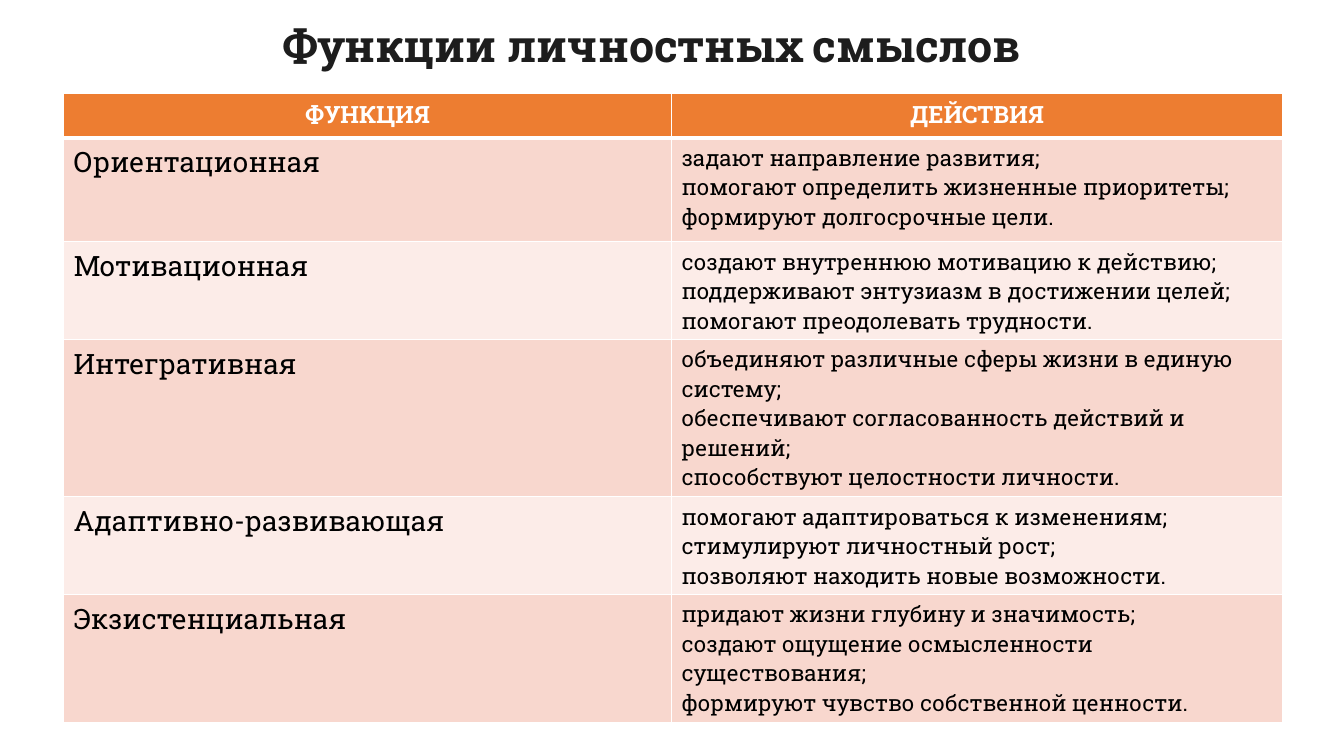
from lxml.etree import SubElement
from pptx import Presentation
from pptx.dml.color import RGBColor
from pptx.enum.text import MSO_AUTO_SIZE, PP_ALIGN
from pptx.oxml.ns import qn
from pptx.util import Inches, Pt

FONT = "Roboto Slab"
COLORS = {
    "title": "1D1D1D",
    "header": "ED7D31",
    "band_dark": "F8D7CE",
    "band_light": "FCECE8",
    "white": "FFFFFF",
    "black": "000000",
}
FORMATS = {
    "title": {"size": Pt(32), "bold": True, "color": "title"},
    "header": {"size": Pt(17), "bold": True, "color": "white"},
    "function": {"size": Pt(20), "bold": False, "color": "black"},
    "action": {"size": Pt(16), "bold": False, "color": "black"},
}
COLUMN_WIDTHS = [6.03, 6.06]
ROW_HEIGHTS = [0.44, 1.03, 0.97, 1.56, 0.97, 1.27]
HEADERS = ["ФУНКЦИЯ", "ДЕЙСТВИЯ"]
# "\n" starts a paragraph, "\v" breaks a line inside one
FUNCTIONS = [
    ("Ориентационная",
     "задают направление развития;\v"
     "помогают определить жизненные приоритеты;\v"
     "формируют долгосрочные цели."),
    ("Мотивационная",
     "создают внутреннюю мотивацию к действию;\n"
     "поддерживают энтузиазм в достижении целей;\n"
     "помогают преодолевать трудности."),
    ("Интегративная",
     "объединяют различные сферы жизни в единую систему;\n"
     "обеспечивают согласованность действий и решений;\n"
     "способствуют целостности личности."),
    ("Адаптивно-развивающая",
     "помогают адаптироваться к изменениям;\n"
     "стимулируют личностный рост;\n"
     "позволяют находить новые возможности."),
    ("Экзистенциальная",
     "придают жизни глубину и значимость;\n"
     "создают ощущение осмысленности существования;\n"
     "формируют чувство собственной ценности."),
]


def rgb(name):
    return RGBColor.from_string(COLORS[name])


def write_text(frame, text, style, align=PP_ALIGN.LEFT):
    frame.text = text
    for para in frame.paragraphs:
        para.alignment = align
        for span in para.runs:
            span.font.name = FONT
            for name, value in FORMATS[style].items():
                if name == "color":
                    span.font.color.rgb = rgb(value)
                else:
                    setattr(span.font, name, value)


def add_title(page, text):
    box = page.shapes.add_textbox(Inches(2.7), Inches(0.13), Inches(7.93), Inches(0.64))
    box.text_frame.word_wrap = True
    box.text_frame.auto_size = MSO_AUTO_SIZE.SHAPE_TO_FIT_TEXT
    write_text(box.text_frame, text, "title")


def set_borders(cell, bottom_points):
    properties = cell._tc.get_or_add_tcPr()
    widths = {"a:lnL": 1, "a:lnR": 1, "a:lnT": 1, "a:lnB": bottom_points}
    for index, (tag, points) in enumerate(widths.items()):
        line = SubElement(properties, qn(tag), w=str(Pt(points)))
        fill = SubElement(line, qn("a:solidFill"))
        SubElement(fill, qn("a:srgbClr"), val=COLORS["white"])
        properties.insert(index, line)


def fill_cell(cell, text, style, color, align=PP_ALIGN.LEFT, bottom_points=1):
    write_text(cell.text_frame, text, style, align)
    cell.fill.solid()
    cell.fill.fore_color.rgb = rgb(color)
    set_borders(cell, bottom_points)


def add_function_table(page):
    table = page.shapes.add_table(
        len(ROW_HEIGHTS), len(COLUMN_WIDTHS), Inches(0.63), Inches(0.93),
        Inches(sum(COLUMN_WIDTHS)), Inches(sum(ROW_HEIGHTS))).table
    for column, width in zip(table.columns, COLUMN_WIDTHS):
        column.width = Inches(width)
    for row, height in zip(table.rows, ROW_HEIGHTS):
        row.height = Inches(height)
    for index, header in enumerate(HEADERS):
        fill_cell(table.cell(0, index), header, "header", "header", PP_ALIGN.CENTER, 3)
    for index, (function, actions) in enumerate(FUNCTIONS, start=1):
        band = "band_dark" if index % 2 else "band_light"
        fill_cell(table.cell(index, 0), function, "function", band)
        fill_cell(table.cell(index, 1), actions, "action", band)


def main():
    deck = Presentation()
    deck.slide_width = Inches(13.33)
    deck.slide_height = Inches(7.5)
    page = deck.slides.add_slide(deck.slide_layouts[6])
    add_title(page, "Функции личностных смыслов")
    add_function_table(page)
    deck.save("out.pptx")


if __name__ == "__main__":
    main()
